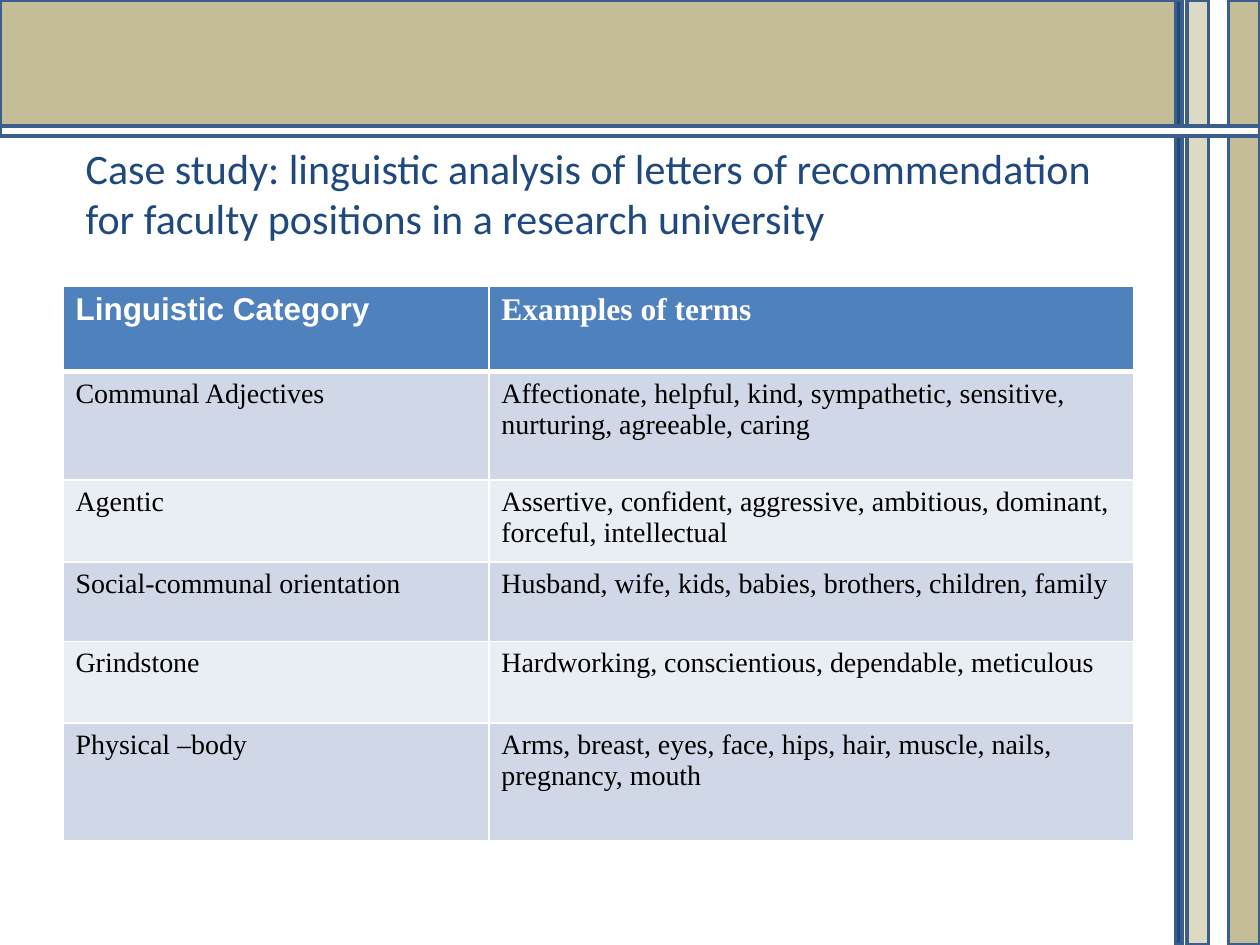
from lxml.etree import SubElement
from pptx import Presentation
from pptx.dml.color import RGBColor
from pptx.enum.shapes import MSO_SHAPE
from pptx.enum.text import MSO_ANCHOR, MSO_AUTO_SIZE, PP_ALIGN
from pptx.oxml.ns import qn
from pptx.util import Inches, Pt

BARS = [
    (0, 0, 9.33, 1, "C4BD97"),
    (9.75, 0, 0.25, 7.5, "C4BD97"),
    (9.42, 0, 0.17, 7.5, "DDD9C3"),
    (9.33, 0, 0.05, 7.5, "1F497D"),
    (0, 1, 10, 0.08, "FFFFFF"),
]
HEADING = ("Case study: linguistic analysis of letters of recommendation "
           "for faculty positions in a research university")
CATEGORIES = [
    ("Linguistic Category", "Examples of terms"),
    ("Communal Adjectives",
     "Affectionate, helpful, kind, sympathetic, sensitive, nurturing, agreeable, caring"),
    ("Agentic",
     "Assertive, confident, aggressive, ambitious, dominant, forceful, intellectual"),
    ("Social-communal orientation",
     "Husband, wife, kids, babies, brothers, children, family"),
    ("Grindstone", "Hardworking, conscientious, dependable, meticulous"),
    ("Physical –body",
     "Arms, breast, eyes, face, hips, hair, muscle, nails, pregnancy, mouth"),
]
COLUMN_WIDTHS = [3.38, 5.12]
ROW_HEIGHTS = [0.68, 0.86, 0.65, 0.63, 0.65, 0.93]


def color(value):
    return RGBColor.from_string(value)


def add_run(paragraph, text, font, size, tint, bold=False):
    run = paragraph.add_run()
    run.text = text
    run.font.name = font
    run.font.size = Pt(size)
    run.font.bold = bold
    run.font.color.rgb = color(tint)


def add_bar(slide, left, top, width, height, fill):
    bar = slide.shapes.add_shape(MSO_SHAPE.RECTANGLE, Inches(left), Inches(top),
                                 Inches(width), Inches(height))
    bar.shadow.inherit = False
    bar.fill.solid()
    bar.fill.fore_color.rgb = color(fill)
    bar.line.color.rgb = color("3A5F8C")
    bar.line.width = Pt(2)


def set_heading(slide):
    heading = slide.shapes.title
    heading.left, heading.top = Inches(0.58), Inches(1.08)
    heading.width, heading.height = Inches(8.25), Inches(1.1)
    frame = heading.text_frame
    frame.word_wrap = True
    frame.auto_size = MSO_AUTO_SIZE.NONE
    frame.vertical_anchor = MSO_ANCHOR.TOP
    paragraph = frame.paragraphs[0]
    paragraph.alignment = PP_ALIGN.LEFT
    add_run(paragraph, HEADING, "Calibri", 24, "1F497D")


def set_borders(cell, top, bottom):
    properties = cell._tc.get_or_add_tcPr()
    for side, width in (("L", 1), ("R", 1), ("T", top), ("B", bottom)):
        border = SubElement(properties, qn(f"a:ln{side}"), w=str(Pt(width)))
        fill = SubElement(border, qn("a:solidFill"))
        SubElement(fill, qn("a:srgbClr"), val="FFFFFF")


def fill_cell(cell, text, row, column):
    is_header = row == 0
    set_borders(cell, 3 if row == 1 else 1, 3 if is_header else 1)
    cell.fill.solid()
    band = "D0D8E8" if row % 2 else "E9EDF4"
    cell.fill.fore_color.rgb = color("4F81BD" if is_header else band)
    paragraph = cell.text_frame.paragraphs[0]
    if is_header:
        font = "Times New Roman" if column else "Arial"
        add_run(paragraph, text, font, 18, "FFFFFF", True)
    else:
        add_run(paragraph, text, "Times New Roman", 16, "000000")


def add_category_table(slide):
    table = slide.shapes.add_table(
        len(CATEGORIES), len(COLUMN_WIDTHS), Inches(0.5), Inches(2.27),
        Inches(sum(COLUMN_WIDTHS)), Inches(sum(ROW_HEIGHTS))).table
    for column, width in zip(table.columns, COLUMN_WIDTHS):
        column.width = Inches(width)
    for row, height in zip(table.rows, ROW_HEIGHTS):
        row.height = Inches(height)
    for row, texts in enumerate(CATEGORIES):
        for column, text in enumerate(texts):
            fill_cell(table.cell(row, column), text, row, column)


def main():
    deck = Presentation()
    deck.slide_width, deck.slide_height = Inches(10), Inches(7.5)
    slide = deck.slides.add_slide(deck.slide_layouts[5])
    for bar in BARS:
        add_bar(slide, *bar)
    set_heading(slide)
    add_category_table(slide)
    deck.save("out.pptx")


if __name__ == "__main__":
    main()
